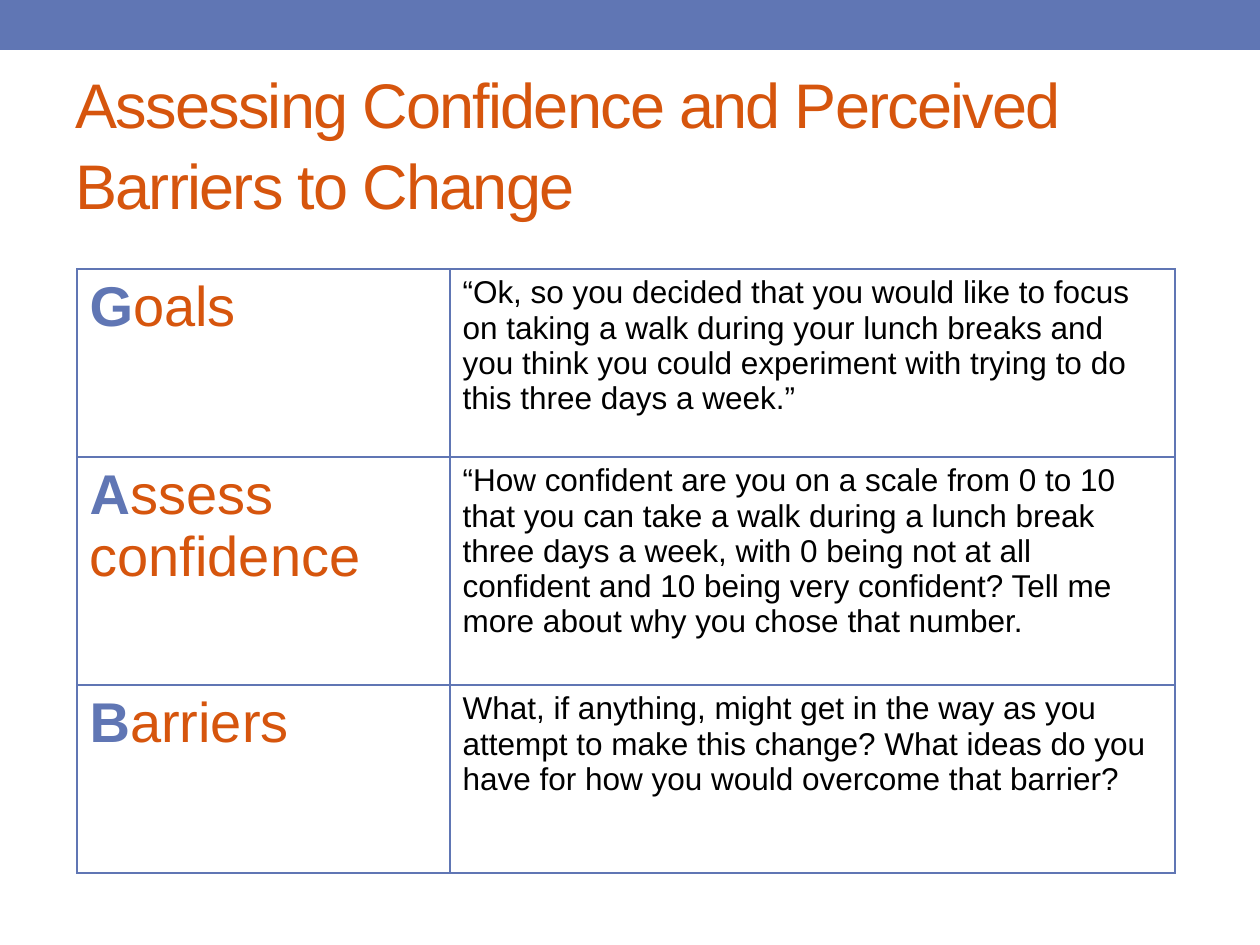
from lxml import etree
from pptx import Presentation
from pptx import util as u
from pptx.dml.color import RGBColor
from pptx.enum import shapes, text
from pptx.oxml.ns import qn

PX = 914400 // 126
BLUE, ORANGE, BLACK = "6076B4", "D6550D", "000000"
COLUMNS = [373, 725]
ROWS = [
    (188, "G", "oals",
     "“Ok, so you decided that you would like to focus on taking a walk during your lunch "
     "breaks and you think you could experiment with trying to do this three days a week.”"),
    (228, "A", "ssess confidence",
     "“How confident are you on a scale from 0 to 10 that you can take a walk during a lunch "
     "break three days a week, with 0 being not at all confident and 10 being very confident? "
     "Tell me more about why you chose that number."),
    (188, "B", "arriers",
     "What, if anything, might get in the way as you attempt to make this change? "
     "What ideas do you have for how you would overcome that barrier?"),
]


def px(*lengths):
    return [n * PX for n in lengths]


def color(value):
    return RGBColor.from_string(value)


def add_run(p, content, size, fill, bold=False):
    r = p.add_run()
    r.text = content
    for name, value in {"name": "Arial", "size": u.Pt(size), "bold": bold}.items():
        setattr(r.font, name, value)
    r.font.color.rgb = color(fill)
    return r


def add_band(s):
    sp = s.shapes.add_shape(shapes.MSO_SHAPE.RECTANGLE, *px(0, 0, 1260, 50))
    sp.shadow.inherit = False
    sp.fill.solid()
    sp.fill.fore_color.rgb = color(BLUE)
    sp.line.fill.background()


def add_title(s, content):
    tf = s.shapes.add_textbox(*px(63, 73, 1134, 136)).text_frame
    tf.word_wrap = True
    tf.vertical_anchor = text.MSO_ANCHOR.MIDDLE
    p = tf.paragraphs[0]
    p.line_spacing = 1.07
    r = add_run(p, content, 36, ORANGE)
    r.font._element.set("spc", "-100")  # letter spacing of -1 pt


def set_borders(cell):
    tc_pr = cell._tc.get_or_add_tcPr()
    for i, side in enumerate(("lnL", "lnR", "lnT", "lnB")):
        ln = etree.Element(qn(f"a:{side}"), w=str(u.Pt(1)))
        fill = etree.SubElement(ln, qn("a:solidFill"))
        etree.SubElement(fill, qn("a:srgbClr"), val=BLUE)
        tc_pr.insert(i, ln)  # borders come before the fill


def add_steps_table(s):
    height = sum(row[0] for row in ROWS)
    frame = s.shapes.add_table(len(ROWS), len(COLUMNS), *px(77, 269, sum(COLUMNS), height))
    table = frame.table
    table.first_row = table.horz_banding = False
    for column, width in zip(table.columns, px(*COLUMNS)):
        column.width = width
    for row, (row_height, initial, rest, prompt) in zip(table.rows, ROWS):
        row.height = row_height * PX
        for cell in row.cells:
            cell.fill.background()
            set_borders(cell)
        step, words = (cell.text_frame.paragraphs[0] for cell in row.cells)
        add_run(step, initial, 32, BLUE, bold=True)
        add_run(step, rest, 32, ORANGE)
        add_run(words, prompt, 18, BLACK)


def main():
    prs = Presentation()
    prs.slide_width, prs.slide_height = px(1260, 945)
    s = prs.slides.add_slide(prs.slide_layouts[6])
    add_band(s)
    add_title(s, "Assessing Confidence and Perceived Barriers to Change")
    add_steps_table(s)
    prs.save("out.pptx")


if __name__ == "__main__":
    main()
